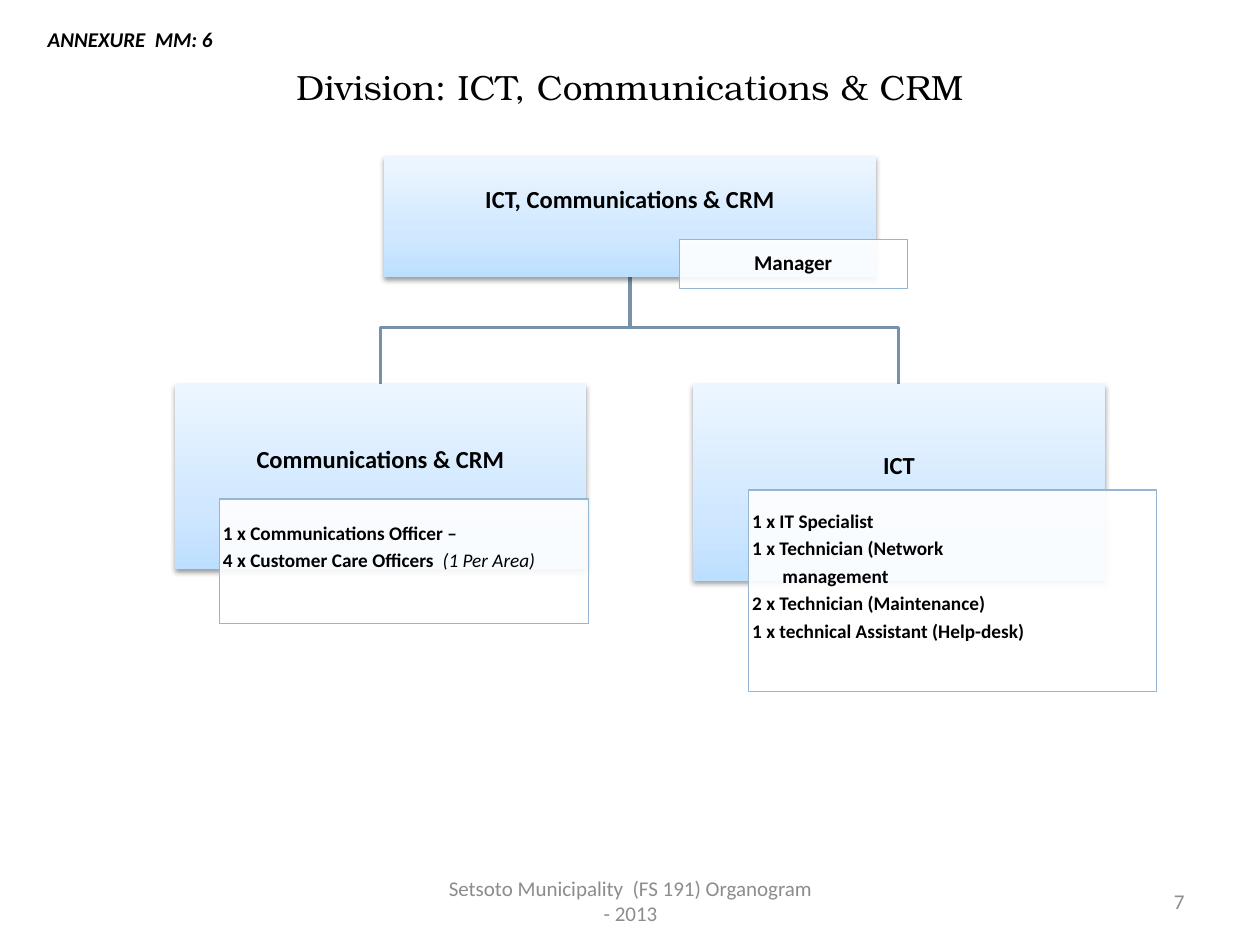
from pptx import Presentation
from pptx.dml.color import RGBColor
from pptx.enum.shapes import MSO_SHAPE
from pptx.enum.text import MSO_ANCHOR, PP_ALIGN
from pptx.oxml import parse_xml
from pptx.oxml.ns import nsdecls
from pptx.util import Inches, Pt

COLORS = {
    "text": "000000",
    "footer": "8C8C8C",
    "connector": "7792A8",
    "border": "94B6D2",
    "panel": "FFFFFF",
    "box_bottom": "BDDFFF",
    "box_middle": "D0E8FF",
    "box_top": "EDF6FF",
}
GRADIENT = f"""<a:gradFill {nsdecls('a')} rotWithShape="1"><a:gsLst>
<a:gs pos="0"><a:srgbClr val="{COLORS['box_bottom']}"/></a:gs>
<a:gs pos="35000"><a:srgbClr val="{COLORS['box_middle']}"/></a:gs>
<a:gs pos="100000"><a:srgbClr val="{COLORS['box_top']}"/></a:gs>
</a:gsLst><a:lin ang="16200000" scaled="1"/></a:gradFill>"""
SHADOW = f"""<a:effectLst {nsdecls('a')}>
<a:outerShdw blurRad="40000" dist="20000" dir="5400000" rotWithShape="0">
<a:srgbClr val="000000"><a:alpha val="38000"/></a:srgbClr></a:outerShdw></a:effectLst>"""


def format_run(run, size, color="text", bold=False, italic=False, font="Calibri"):
    run.font.name = font
    run.font.size = Pt(size)
    run.font.bold = bold
    run.font.italic = italic
    run.font.color.rgb = RGBColor.from_string(COLORS[color])


def fill_text(shape, lines, size, align, insets):
    frame = shape.text_frame
    frame.word_wrap = True
    frame.vertical_anchor = MSO_ANCHOR.MIDDLE
    frame.margin_left, frame.margin_top, frame.margin_right, frame.margin_bottom = map(Inches, insets)
    frame.text = "\n".join(lines)
    for paragraph in frame.paragraphs:
        paragraph.alignment = align
        paragraph.line_spacing = 0.9
        paragraph.space_after = Pt(round(size * 0.35, 1))
        for run in paragraph.runs:
            format_run(run, size, bold=True)


presentation = Presentation()
presentation.slide_width = Inches(10)
presentation.slide_height = Inches(7.5)
slide = presentation.slides.add_slide(presentation.slide_layouts[5])

title = slide.shapes.title
title.left, title.top, title.width, title.height = map(Inches, (0.5, 0.3, 9, 0.77))
title.text_frame.text = "Division: ICT, Communications & CRM"
title.text_frame.vertical_anchor = MSO_ANCHOR.MIDDLE
title.text_frame.paragraphs[0].alignment = PP_ALIGN.CENTER
format_run(title.text_frame.paragraphs[0].runs[0], 20, font="TeX Gyre Bonum")

for branch_x in (7.13, 3.02):
    route = [(5, 2.6), (branch_x, 2.6), (branch_x, 3.05)]
    builder = slide.shapes.build_freeform(Inches(5), Inches(2.2))
    builder.add_line_segments([(Inches(x), Inches(y)) for x, y in route], close=False)
    branch = builder.convert_to_shape()
    branch.shadow.inherit = False
    branch.fill.background()
    branch.line.color.rgb = RGBColor.from_string(COLORS["connector"])
    branch.line.width = Pt(2)

units = [
    ("ICT, Communications & CRM", (3.05, 1.24, 3.9, 0.96),
     ["Manager"], (5.39, 1.9, 1.81, 0.39), 12, PP_ALIGN.CENTER, 0.01),
    ("Communications & CRM", (1.39, 3.05, 3.26, 1.47),
     ["1 x Communications Officer –", "4 x Customer Care Officers  "],
     (1.74, 3.96, 2.93, 0.99), 11, PP_ALIGN.LEFT, 0.23),
    ("ICT", (5.5, 3.05, 3.27, 1.56),
     ["1 x IT Specialist", "1 x Technician (Network", "management",
      "2 x Technician (Maintenance)", "1 x technical Assistant (Help-desk)"],
     (5.94, 3.89, 3.24, 1.6), 11, PP_ALIGN.LEFT, 0.23),
]
staff_panels = []
for name, box_place, staff, panel_place, size, align, bottom in units:
    box = slide.shapes.add_shape(MSO_SHAPE.RECTANGLE, *map(Inches, box_place))
    box.line.fill.background()
    properties = box.element.spPr
    properties.insert(2, parse_xml(GRADIENT))
    properties.append(parse_xml(SHADOW))
    fill_text(box, [name], 14, PP_ALIGN.CENTER, (0.01, 0.01, 0.01, 0.27))

    panel = slide.shapes.add_shape(MSO_SHAPE.RECTANGLE, *map(Inches, panel_place))
    panel.shadow.inherit = False
    panel.fill.solid()
    panel.fill.fore_color.rgb = RGBColor.from_string(COLORS["panel"])
    panel_color = panel.element.spPr.find(".//{*}solidFill/{*}srgbClr")
    panel_color.append(parse_xml(f'<a:alpha {nsdecls("a")} val="90000"/>'))
    panel.line.color.rgb = RGBColor.from_string(COLORS["border"])
    panel.line.width = Pt(0.75)
    fill_text(panel, staff, size, align, (0.03, 0.01, 0.03, bottom))
    staff_panels.append(panel)

area_note = staff_panels[1].text_frame.paragraphs[1].add_run()
area_note.text = "(1 Per Area)"
format_run(area_note, 11, italic=True)
continuation = staff_panels[2].text_frame.paragraphs[2]
continuation._p.get_or_add_pPr().set("marL", str(Inches(0.24)))

labels = [
    ("Setsoto Municipality  (FS 191) Organogram - 2013", (3.42, 6.95, 3.17, 0.4),
     PP_ALIGN.CENTER, MSO_ANCHOR.MIDDLE, "footer", False),
    ("7", (7.17, 6.95, 2.33, 0.4), PP_ALIGN.RIGHT, MSO_ANCHOR.MIDDLE, "footer", False),
    ("ANNEXURE  MM: 6", (0.28, 0.16, 1.97, 0.3), PP_ALIGN.LEFT, MSO_ANCHOR.TOP, "text", True),
]
for text, place, align, anchor, color, emphasis in labels:
    label = slide.shapes.add_textbox(*map(Inches, place))
    label.text_frame.word_wrap = True
    label.text_frame.vertical_anchor = anchor
    label.text_frame.text = text
    paragraph = label.text_frame.paragraphs[0]
    paragraph.alignment = align
    format_run(paragraph.runs[0], 12, color, bold=emphasis, italic=emphasis)

presentation.save("out.pptx")
